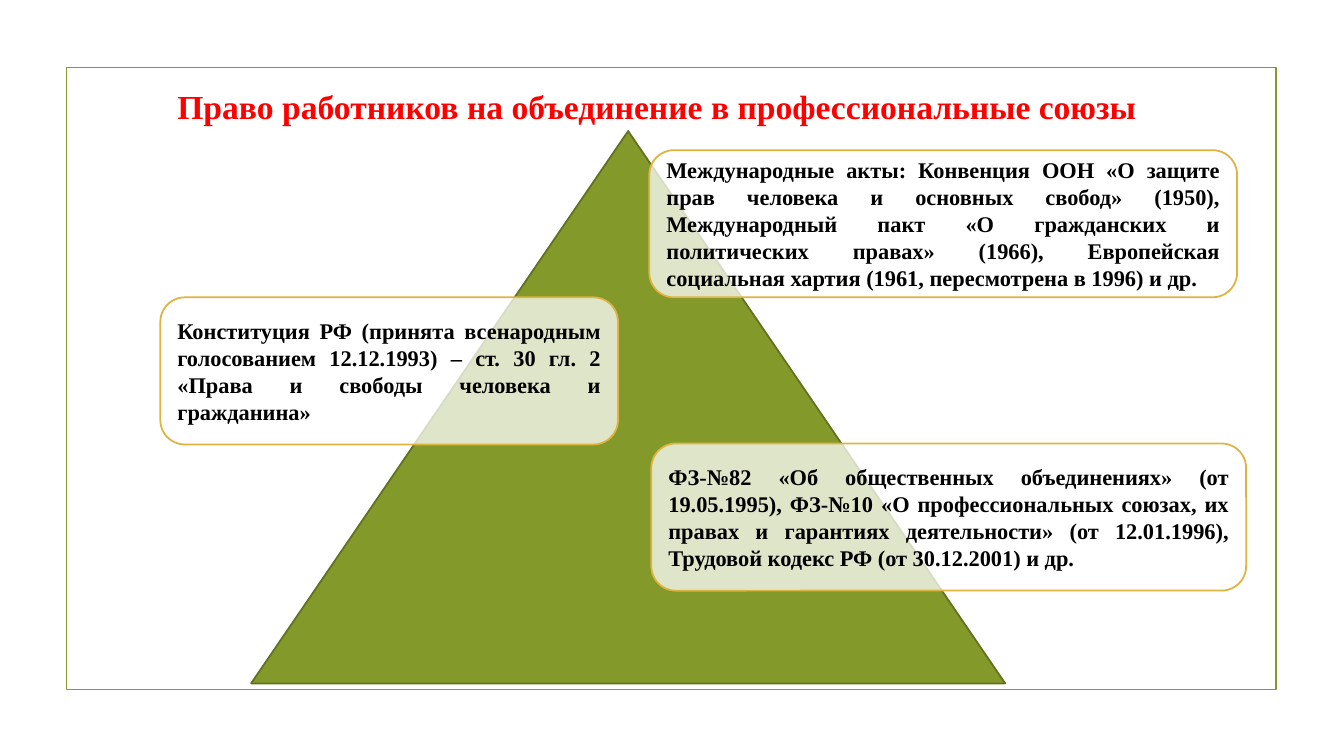
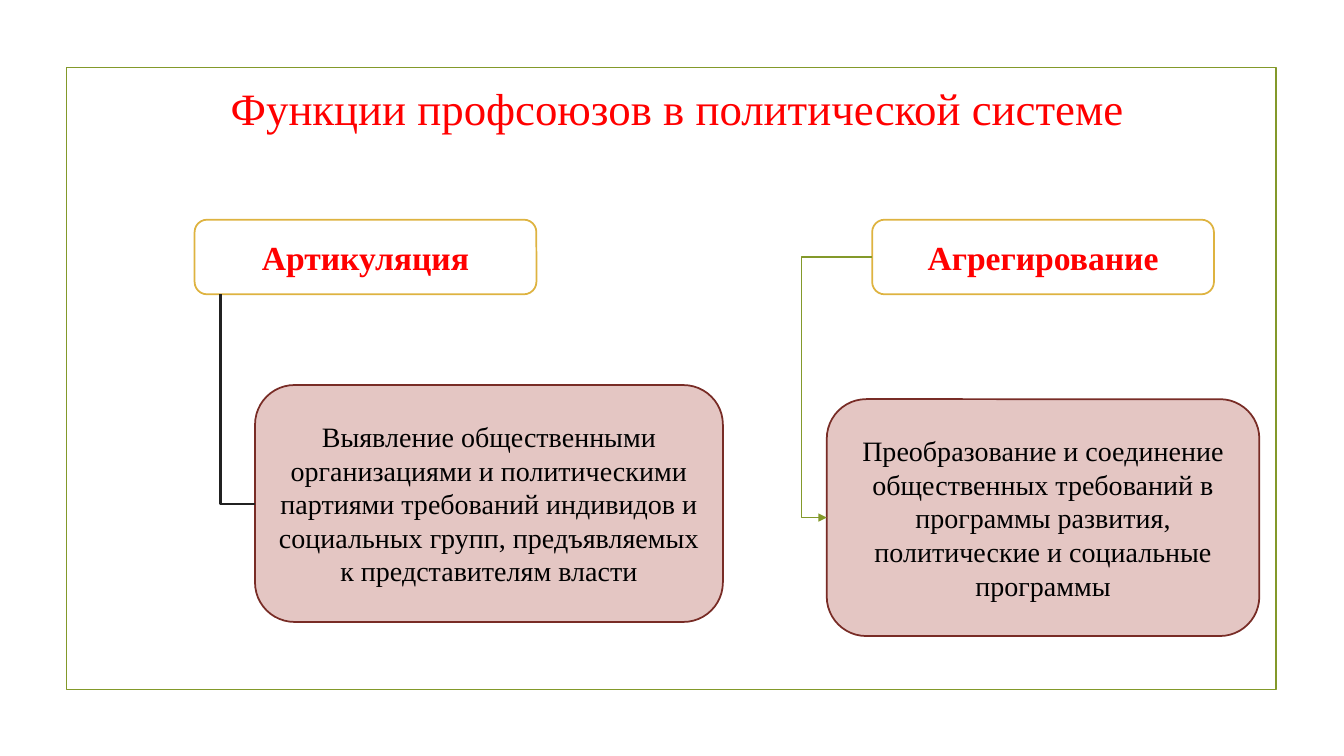
from lxml import etree
from pptx import Presentation
from pptx.dml.color import RGBColor
from pptx.enum.shapes import MSO_CONNECTOR, MSO_SHAPE
from pptx.enum.text import MSO_ANCHOR, MSO_AUTO_SIZE, PP_ALIGN
from pptx.oxml.ns import qn
from pptx.util import Inches, Pt

RECT = MSO_SHAPE.RECTANGLE
ROUND = MSO_SHAPE.ROUNDED_RECTANGLE
TRIANGLE = MSO_SHAPE.ISOSCELES_TRIANGLE
ELBOW = MSO_CONNECTOR.ELBOW
LEFT, CENTER, JUSTIFY = PP_ALIGN.LEFT, PP_ALIGN.CENTER, PP_ALIGN.JUSTIFY
MIDDLE = MSO_ANCHOR.MIDDLE
NO_RESIZE, GROW = MSO_AUTO_SIZE.NONE, MSO_AUTO_SIZE.SHAPE_TO_FIT_TEXT

FONT = "Times New Roman"
LEFT_SITE = 1
COLORS = {
    "olive": "83992A",
    "dark olive": "61711F",
    "gold": "DEB340",
    "brick": "A23C33",
    "dark brick": "782C26",
    "red": "FF0000",
    "white": "FFFFFF",
    "black": "000000",
    "charcoal": "212121",
}


def rgb(name):
    return RGBColor.from_string(COLORS[name])


def add_text(sp, text, size, color="black", bold=False, align=LEFT,
             wrap=True, autosize=NO_RESIZE):
    tf = sp.text_frame
    tf.word_wrap = wrap
    tf.auto_size = autosize
    p = tf.paragraphs[0]
    p.alignment = align
    r = p.add_run()
    r.text = text
    r.font.name = FONT
    r.font.size = Pt(size)
    r.font.bold = bold
    r.font.color.rgb = rgb(color)


def add_box(s, kind, box, line, fill=None, opacity=100):
    """Add a preset shape; opacity is the fill's percentage."""
    sp = s.shapes.add_shape(kind, *map(Inches, box))
    sp.shadow.inherit = False
    sp.line.color.rgb = rgb(line)
    sp.line.width = Pt(1.25)
    if fill is None:
        sp.fill.background()
        return sp
    sp.fill.solid()
    sp.fill.fore_color.rgb = rgb(fill)
    if opacity < 100:
        clr = sp.fill._xPr.find(qn("a:solidFill")).find(qn("a:srgbClr"))
        etree.SubElement(clr, qn("a:alpha")).set("val", str(opacity * 1000))
    return sp


def add_card(s, box, text, size, line, fill, opacity=100, **text_format):
    sp = add_box(s, ROUND, box, line, fill, opacity)
    sp.text_frame.vertical_anchor = MIDDLE
    add_text(sp, text, size, **text_format)
    return sp


def add_elbow(s, start, end, bend, color, width):
    """Add an elbow that turns after the given share of its horizontal span."""
    c = s.shapes.add_connector(ELBOW, *map(Inches, start + end))
    c.line.color.rgb = rgb(color)
    c.line.width = Pt(width)
    sppr = c._element.spPr
    etree.SubElement(sppr, qn("a:effectLst"))
    guides = sppr.find(qn("a:prstGeom")).get_or_add_avLst()
    guide = etree.SubElement(guides, qn("a:gd"))
    guide.set("name", "adj1")
    guide.set("fmla", f"val {round(bend * 100000)}")
    return c


def add_arrowhead(c):
    tail = etree.SubElement(c.line._get_or_add_ln(), qn("a:tailEnd"))
    tail.set("type", "triangle")


def new_slide(prs, title, box, size, bold=False):
    """Add a framed slide with a red title."""
    s = prs.slides.add_slide(prs.slide_layouts[6])
    add_box(s, RECT, (0.66, 0.67, 12, 6.17), "olive")
    sp = s.shapes.add_textbox(*map(Inches, box))
    add_text(sp, title, size, color="red", bold=bold, wrap=False, autosize=GROW)
    return s


def legal_basis_slide(prs):
    s = new_slide(prs, "Право работников на объединение в профессиональные союзы",
                  (1.66, 0.8, 9.91, 0.5), 24, bold=True)
    add_box(s, TRIANGLE, (2.49, 1.3, 7.48, 5.48), "dark olive", "olive")
    laws = [
        (1.59, 2.95, 4.54,
         "Конституция РФ (принята всенародным голосованием 12.12.1993) – "
         "ст. 30 гл. 2 «Права и свободы человека и гражданина»"),
        (6.44, 1.49, 5.83,
         "Международные акты: Конвенция ООН «О защите прав человека и основных "
         "свобод» (1950), Международный пакт «О гражданских и политических "
         "правах» (1966), Европейская социальная хартия (1961, пересмотрена "
         "в 1996) и др."),
        (6.46, 4.4, 5.9,
         "ФЗ-№82 «Об общественных объединениях» (от 19.05.1995), ФЗ-№10 "
         "«О профессиональных союзах, их правах и гарантиях деятельности» "
         "(от 12.01.1996), Трудовой кодекс РФ (от 30.12.2001) и др."),
    ]
    for left, top, width, text in laws:
        add_card(s, (left, top, width, 1.46), text, 16, "gold", "white", 75,
                 bold=True, align=JUSTIFY)


def add_function(s, left, heading, detail_box, detail):
    """Add a heading card with its detail card and return both."""
    head = add_card(s, (left, 2.18, 3.39, 0.74), heading, 24, "gold", "white",
                    color="red", bold=True, align=CENTER)
    body = add_card(s, detail_box, detail, 20, "dark brick", "brick", 29,
                    align=CENTER)
    return head, body


def functions_slide(prs):
    s = new_slide(prs, "Функции профсоюзов в политической системе",
                  (2.19, 0.75, 9.26, 0.64), 32)
    add_function(
        s, 1.93, "Артикуляция", (2.53, 3.82, 4.64, 2.35),
        "Выявление общественными организациями и политическими партиями "
        "требований индивидов и социальных групп, предъявляемых "
        "к представителям власти")
    head, body = add_function(
        s, 8.65, "Агрегирование", (8.2, 3.96, 4.29, 2.35),
        "Преобразование и соединение общественных требований в программы "
        "развития, политические и социальные программы")
    add_elbow(s, (2.53, 5), (2.19, 2.92), 1, "charcoal", 2)
    arrow = add_elbow(s, (8.65, 2.55), (8.2, 5.13), 1.56, "olive", 0.75)
    arrow.begin_connect(head, LEFT_SITE)
    arrow.end_connect(body, LEFT_SITE)
    add_arrowhead(arrow)


def main():
    prs = Presentation()
    prs.slide_width = Inches(13.33)
    prs.slide_height = Inches(7.5)
    legal_basis_slide(prs)
    functions_slide(prs)
    prs.save("out.pptx")


if __name__ == "__main__":
    main()
